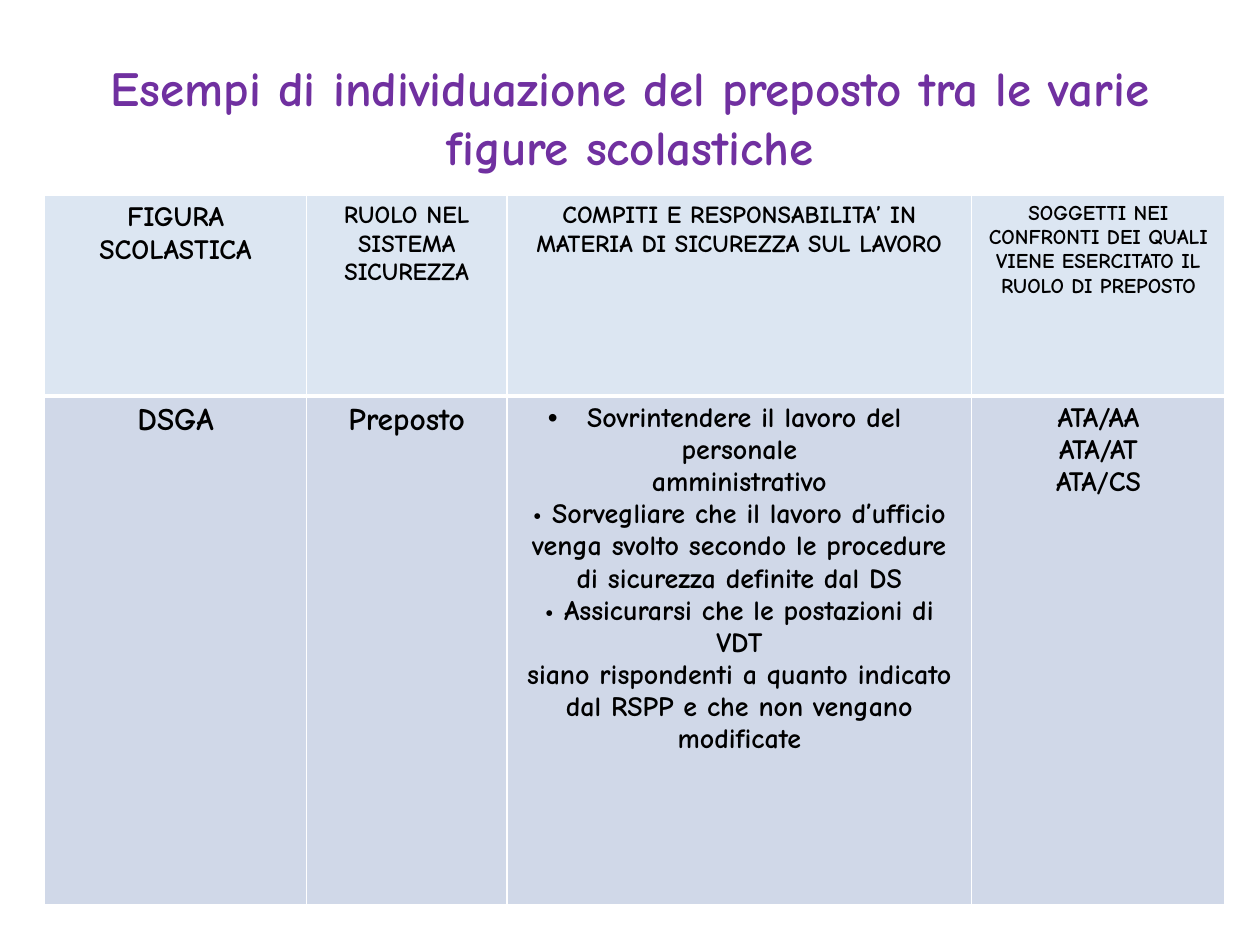
from dataclasses import dataclass

from lxml import etree
from pptx import Presentation
from pptx import util as u
from pptx.dml.color import RGBColor
from pptx.enum import text
from pptx.oxml.ns import qn


@dataclass(frozen=True)
class Theme:
    font: str = "Comic Neue"
    title_color: str = "7030A0"
    text_color: str = "000000"
    header_fill: str = "DCE6F2"
    body_fill: str = "D0D8E8"
    border_color: str = "FFFFFF"
    title_size: int = 28
    thin_border: float = 1
    thick_border: float = 3


@dataclass(frozen=True)
class CellText:
    size: int
    lines: tuple[str, ...]
    first_bulleted: bool = False


THEME = Theme()
TITLE = "Esempi di individuazione del preposto tra le varie figure scolastiche"
COLUMN_WIDTHS = (5.28, 4.04, 9.37, 5.11)
ROW_HEIGHTS = (4.04, 10.26)
HEADER = (
    CellText(16, ("FIGURA SCOLASTICA",)),
    CellText(14, ("RUOLO NEL SISTEMA SICUREZZA",)),
    CellText(14, ("COMPITI E RESPONSABILITA’ IN MATERIA DI SICUREZZA SUL LAVORO",)),
    CellText(12, ("SOGGETTI NEI CONFRONTI DEI QUALI VIENE ESERCITATO IL RUOLO DI PREPOSTO",)),
)
BODY = (
    CellText(18, ("DSGA",)),
    CellText(18, ("Preposto",)),
    CellText(16, (
        "Sovrintendere il lavoro del personale",
        "amministrativo",
        "• Sorvegliare che il lavoro d’ufficio venga svolto secondo le procedure "
        "di sicurezza definite dal DS",
        "• Assicurarsi che le postazioni di VDT",
        "siano rispondenti a quanto indicato dal RSPP e che non vengano modificate",
    ), first_bulleted=True),
    CellText(16, ("ATA/AA", "ATA/AT", "ATA/CS")),
)


def write_paragraph(paragraph, content: str, size: int, color: str) -> None:
    paragraph.text = content
    paragraph.alignment = text.PP_ALIGN.CENTER
    font = paragraph.font
    font.name = THEME.font
    font.size = u.Pt(size)
    font.bold = True
    font.color.rgb = RGBColor.from_string(color)


def add_bullet(paragraph) -> None:
    properties = paragraph._p.get_or_add_pPr()
    properties.set("marL", "0")
    properties.set("indent", str(-u.Cm(0.79)))
    etree.SubElement(properties, qn("a:buFont"), typeface="Arial")
    etree.SubElement(properties, qn("a:buChar"), char="•")


def set_borders(cell, bottom_width: float) -> None:
    """Draw all four edges; must run before the cell is filled."""
    properties = cell._tc.get_or_add_tcPr()
    for edge in ("lnL", "lnR", "lnT", "lnB"):
        width = bottom_width if edge == "lnB" else THEME.thin_border
        line = etree.SubElement(properties, qn(f"a:{edge}"), w=str(u.Pt(width)))
        fill = etree.SubElement(line, qn("a:solidFill"))
        etree.SubElement(fill, qn("a:srgbClr"), val=THEME.border_color)


def fill_cell(cell, content: CellText, color: str, bottom_width: float) -> None:
    set_borders(cell, bottom_width)
    cell.fill.solid()
    cell.fill.fore_color.rgb = RGBColor.from_string(color)
    frame = cell.text_frame
    for index, line in enumerate(content.lines):
        paragraph = frame.add_paragraph() if index else frame.paragraphs[0]
        if content.first_bulleted and index == 0:
            add_bullet(paragraph)
        write_paragraph(paragraph, line, content.size, THEME.text_color)


def add_title(slide) -> None:
    box = slide.shapes.add_textbox(u.Cm(1.27), u.Cm(0.76), u.Cm(22.86), u.Cm(3.18))
    frame = box.text_frame
    frame.word_wrap = True
    frame.vertical_anchor = text.MSO_ANCHOR.MIDDLE
    write_paragraph(frame.paragraphs[0], TITLE, THEME.title_size, THEME.title_color)


def add_roles_table(slide) -> None:
    table = slide.shapes.add_table(
        len(ROW_HEIGHTS), len(COLUMN_WIDTHS), u.Cm(0.9), u.Cm(3.94),
        u.Cm(sum(COLUMN_WIDTHS)), u.Cm(sum(ROW_HEIGHTS))).table
    for column, width in zip(table.columns, COLUMN_WIDTHS):
        column.width = u.Cm(width)
    for row, height in zip(table.rows, ROW_HEIGHTS):
        row.height = u.Cm(height)
    row_styles = (
        (HEADER, THEME.header_fill, THEME.thick_border),
        (BODY, THEME.body_fill, THEME.thin_border),
    )
    for row, (contents, color, bottom_width) in zip(table.rows, row_styles):
        for cell, content in zip(row.cells, contents):
            fill_cell(cell, content, color, bottom_width)


def main() -> None:
    presentation = Presentation()
    presentation.slide_width = u.Cm(25.4)
    presentation.slide_height = u.Cm(19.05)
    slide = presentation.slides.add_slide(presentation.slide_layouts[6])
    add_title(slide)
    add_roles_table(slide)
    presentation.save("out.pptx")


if __name__ == "__main__":
    main()
